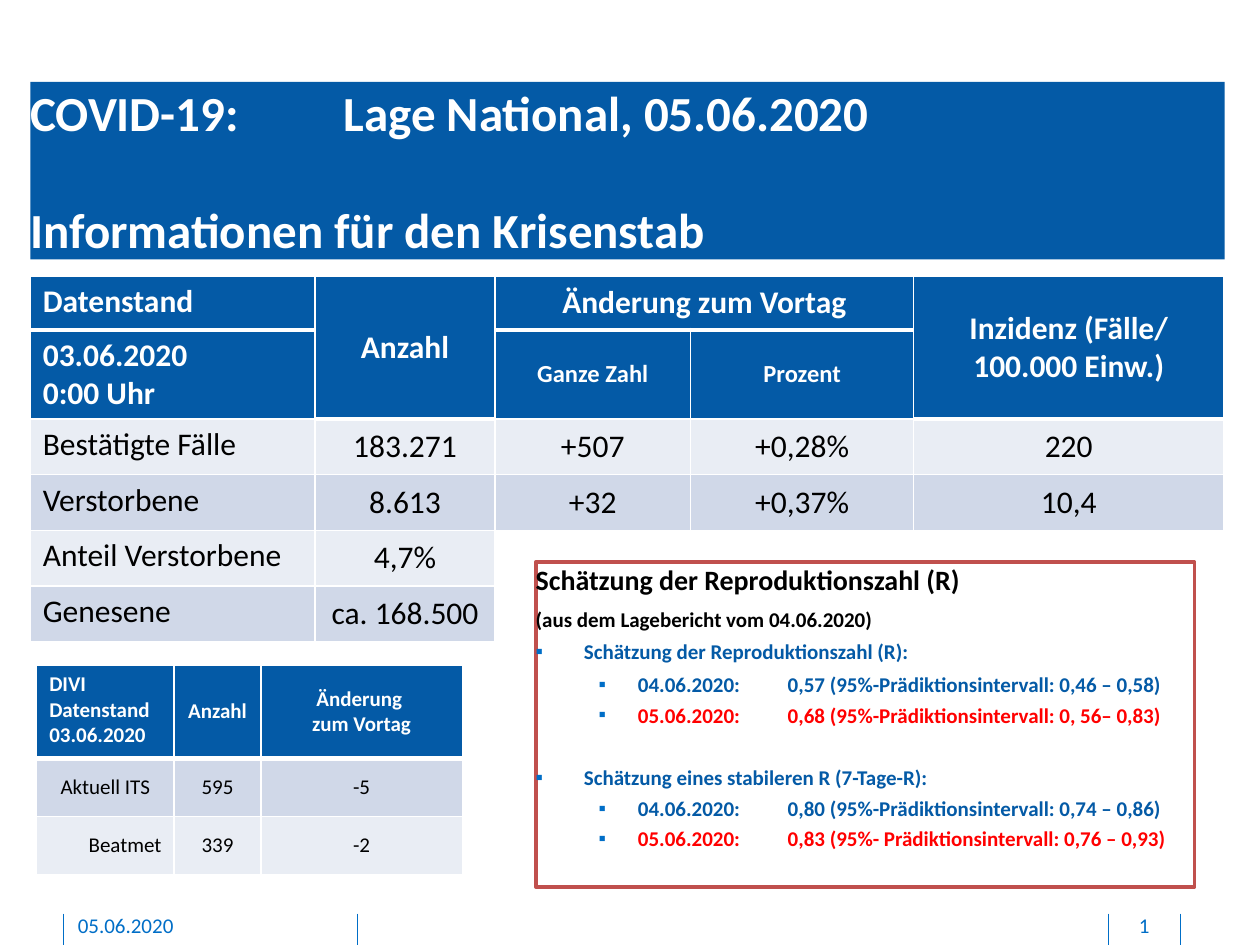
from dataclasses import dataclass
from typing import Any, Optional

import pptx
import pptx.dml.color
import pptx.enum.shapes
import pptx.enum.text
import pptx.oxml
import pptx.oxml.ns
import pptx.util
from lxml import etree

Cm, Pt = pptx.util.Cm, pptx.util.Pt
Align = pptx.enum.text.PP_ALIGN
Anchor = pptx.enum.text.MSO_ANCHOR
qn = pptx.oxml.ns.qn

COLORS = {
    "header": "045AA6", "accent": "006EC7", "light": "E9EDF4", "dark": "D0D8E8",
    "white": "FFFFFF", "black": "000000", "red": "FF0000", "frame": "C0504D",
}
NO_MARGINS = {f"margin_{side}": 0 for side in ("left", "top", "right", "bottom")}


@dataclass
class Cell:
    text: str = ""
    alignment: Any = Align.CENTER
    anchor: Any = Anchor.MIDDLE
    size: Optional[float] = None


@dataclass
class TableLayout:
    left: float
    top: float
    widths: list
    heights: list
    rows: list
    bands: list
    size: float
    header_rows: int
    merges: tuple = ()


@dataclass
class Line:
    text: str
    color: str
    space: float = 3
    level: Optional[int] = None  # None: no bullet
    size: float = 12


def label(text: str) -> Cell:
    return Cell(text, Align.LEFT, Anchor.TOP)


def rgb(name: str):
    return pptx.dml.color.RGBColor.from_string(COLORS[name])


def apply(target, values: dict) -> None:
    for name, value in values.items():
        setattr(target, name, value)


def format_font(font, size: float, color: str, bold: bool = False) -> None:
    apply(font, {"name": "Calibri", "size": Pt(size), "bold": bold})
    font.color.rgb = rgb(color)


def place(shape, left: float, top: float, width: float, height: float) -> None:
    apply(shape, {"left": Cm(left), "top": Cm(top), "width": Cm(width), "height": Cm(height)})


def fill(target, color: str) -> None:
    target.fill.solid()
    target.fill.fore_color.rgb = rgb(color)


def add_tabs(paragraph, *positions: float) -> None:
    tabs = etree.SubElement(paragraph._p.get_or_add_pPr(), qn("a:tabLst"))
    for position in positions:
        etree.SubElement(tabs, qn("a:tab"), pos=str(Cm(position)), algn="l")


def add_bullet(paragraph) -> None:
    properties = paragraph._p.get_or_add_pPr()
    bullet_color = etree.SubElement(properties, qn("a:buClr"))
    etree.SubElement(bullet_color, qn("a:srgbClr"), val=COLORS["accent"])
    etree.SubElement(properties, qn("a:buChar"), char="▪")


def set_borders(cell, widths: dict) -> None:
    properties = cell._tc.get_or_add_tcPr()
    for index, (side, width) in enumerate(widths.items()):
        border = etree.Element(qn(f"a:ln{side}"), w=str(Pt(width)))
        solid = etree.SubElement(border, qn("a:solidFill"))
        etree.SubElement(solid, qn("a:srgbClr"), val=COLORS["white"])
        properties.insert(index, border)


def draw_table(slide, layout: TableLayout) -> None:
    shape = slide.shapes.add_table(
        len(layout.heights), len(layout.widths), Cm(layout.left), Cm(layout.top),
        Cm(sum(layout.widths)), Cm(sum(layout.heights)))
    table = shape.table
    apply(table, {"first_row": False, "horz_banding": False})
    for column, width in zip(table.columns, layout.widths):
        column.width = Cm(width)
    for row, height in zip(table.rows, layout.heights):
        row.height = Cm(height)
    for first, last in layout.merges:
        table.cell(*first).merge(table.cell(*last))

    for row_index, row in enumerate(layout.rows):
        is_header = row_index < layout.header_rows
        for column_index, content in enumerate(row):
            cell = table.cell(row_index, column_index)
            is_filled = is_header or content.text
            fill(cell, layout.bands[row_index] if is_filled else "white")
            widths = {"L": 1, "R": 1}
            if row_index == 0:
                widths["T"] = 1
            widths["B"] = 3 if row_index == 0 or (is_header and cell.is_spanned) else 1
            set_borders(cell, widths)
            if not content.text:
                continue
            cell.text = content.text
            cell.vertical_anchor = content.anchor
            for paragraph in cell.text_frame.paragraphs:
                paragraph.alignment = content.alignment
                format_font(paragraph.runs[0].font, content.size or layout.size,
                            "white" if is_header else "black", is_header)


def draw_title(title) -> None:
    place(title, 0.61, 1.65, 24.08, 3.58)
    fill(title, "header")
    frame = title.text_frame
    apply(frame, {**NO_MARGINS, "vertical_anchor": Anchor.MIDDLE, "word_wrap": True,
                  "auto_size": pptx.enum.text.MSO_AUTO_SIZE.NONE})
    frame.text = "COVID-19: \t\tLage National, 05.06.2020\nInformationen für den Krisenstab"
    first, second = frame.paragraphs
    second.space_before = Pt(33.5)
    add_tabs(first, 5.08, 6.32)
    for paragraph in frame.paragraphs:
        paragraph.alignment = Align.LEFT
        format_font(paragraph.runs[0].font, 28, "white", True)


def draw_estimates(body, lines: list) -> None:
    place(body, 10.8, 11.33, 13.28, 6.55)
    fill(body, "white")
    body.line.color.rgb = rgb("frame")
    body.line.width = Pt(2)
    frame = body.text_frame
    apply(frame, {**NO_MARGINS, "vertical_anchor": Anchor.TOP, "word_wrap": True,
                  "auto_size": pptx.enum.text.MSO_AUTO_SIZE.NONE})
    indents = {None: (0, 0), 0: (0.97, -0.97), 1: (2.06, -0.79)}
    for index, line in enumerate(lines):
        paragraph = frame.add_paragraph() if index else frame.paragraphs[0]
        apply(paragraph, {"level": line.level or 0, "space_before": Pt(line.space),
                          "alignment": Align.LEFT})
        properties = paragraph._p.get_or_add_pPr()
        for name, value in zip(("marL", "indent"), indents[line.level]):
            properties.set(name, str(Cm(value)))
        if line.level is None:
            etree.SubElement(properties, qn("a:buNone"))
        else:
            add_bullet(paragraph)
        if line.level == 1:
            add_tabs(paragraph, 4.72)
        run = paragraph.add_run()
        run.text = line.text
        format_font(run.font, line.size, line.color, True)


def draw_footer_line(slide, x: float) -> None:
    connector = slide.shapes.add_connector(
        pptx.enum.shapes.MSO_CONNECTOR.STRAIGHT, Cm(x), Cm(18.42), Cm(x), Cm(19.05))
    connector.line.color.rgb = rgb("accent")
    connector.line.width = Pt(0.5)
    etree.SubElement(connector._element.spPr, qn("a:effectLst"))


def draw_footer_text(slide, text: str, left: float, width: float, alignment) -> None:
    box = slide.shapes.add_textbox(Cm(left), Cm(18.39), Cm(width), Cm(0.53))
    apply(box.text_frame, {**NO_MARGINS, "margin_bottom": Cm(0.13), "word_wrap": True})
    paragraph = box.text_frame.paragraphs[0]
    apply(paragraph, {"text": text, "alignment": alignment})
    format_font(paragraph.runs[0].font, 12, "accent")


CASES = TableLayout(
    0.61, 5.56, [5.74, 3.63, 3.94, 4.5, 6.25], [1.09, 1.8] + [1.12] * 4,
    [[label("Datenstand"), Cell("Anzahl"), Cell("Änderung zum Vortag"), Cell(),
      Cell("Inzidenz (Fälle/\n100.000 Einw.)")],
     [label("03.06.2020\n0:00 Uhr"), Cell(), Cell("Ganze Zahl", size=14),
      Cell("Prozent", size=14), Cell()]]
    + [[label(name), *map(Cell, values)] for name, *values in (
        ("Bestätigte Fälle", "183.271", "+507", "+0,28%", "220"),
        ("Verstorbene", "8.613", "+32", "+0,37%", "10,4"),
        ("Anteil Verstorbene", "4,7%", "", "", ""),
        ("Genesene", "ca. 168.500", "", "", ""))],
    ["header"] * 2 + ["light", "dark"] * 2, 18, 2,
    (((0, 1), (1, 1)), ((0, 2), (0, 3)), ((0, 4), (1, 4))))

INTENSIVE_CARE = TableLayout(
    0.74, 13.41, [2.77, 1.75, 4.06], [1.88, 1.17, 1.17],
    [[label("DIVI\nDatenstand\n03.06.2020"), Cell("Anzahl"), Cell("Änderung \nzum Vortag")],
     [Cell("Aktuell ITS"), Cell("595"), Cell("-5")],
     [Cell("Beatmet", Align.RIGHT), Cell("339"), Cell("-2")]],
    ["header", "dark", "light"], 12, 1)

ESTIMATES = [
    Line("Schätzung der Reproduktionszahl (R)", "black", 0, size=16),
    Line("(aus dem Lagebericht vom 04.06.2020)", "black", 6),
    Line("Schätzung der Reproduktionszahl (R):", "header", 4.3, 0),
    Line("04.06.2020: \t\t0,57 (95%-Prädiktionsintervall: 0,46 – 0,58)", "header", 4.3, 1),
    Line("05.06.2020:\t\t0,68 (95%-Prädiktionsintervall: 0, 56– 0,83)", "red", level=1),
    Line("Schätzung eines stabileren R (7-Tage-R):", "header", 21.5, 0),
    Line("04.06.2020: \t\t0,80 (95%-Prädiktionsintervall: 0,74 – 0,86)", "header", level=1),
    Line("05.06.2020:\t\t0,83 (95%- Prädiktionsintervall: 0,76 – 0,93)", "red", level=1),
]


def main() -> None:
    presentation = pptx.Presentation()
    apply(presentation, {"slide_width": Cm(25.4), "slide_height": Cm(19.05)})
    slide = presentation.slides.add_slide(presentation.slide_layouts[1])
    title, body = slide.placeholders
    # Footer
    for x in (1.27, 7.21, 22.35, 23.8):
        draw_footer_line(slide, x)
    draw_footer_text(slide, "05.06.2020", 1.57, 5.16, Align.LEFT)
    draw_footer_text(slide, "1", 22.38, 1.37, Align.CENTER)
    # Title and tables
    draw_title(title)
    for layout in (CASES, INTENSIVE_CARE):
        draw_table(slide, layout)
    # Estimates lie in front of the empty table cells
    draw_estimates(body, ESTIMATES)
    slide.shapes._spTree.append(body._element)
    presentation.save("out.pptx")


if __name__ == "__main__":
    main()
